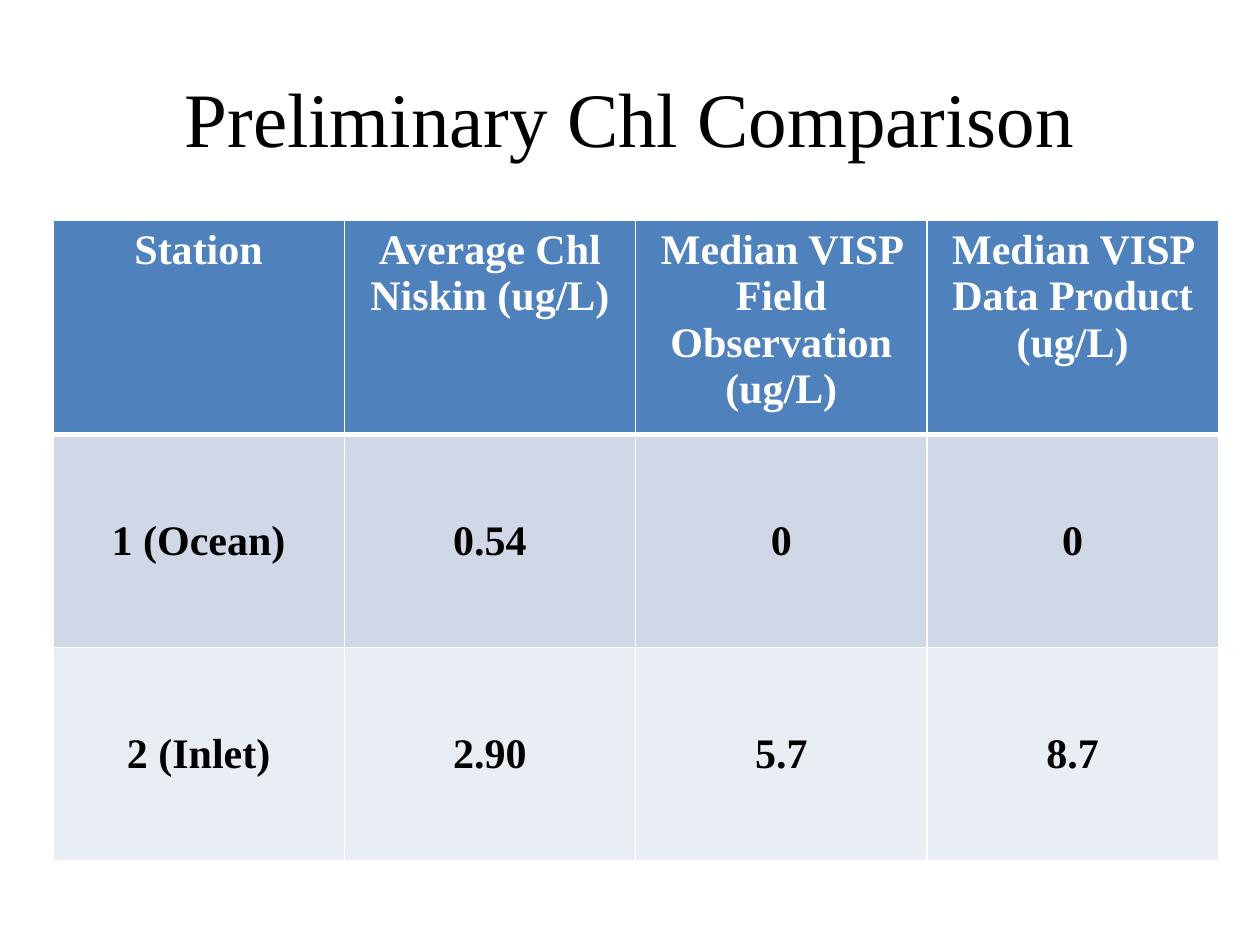
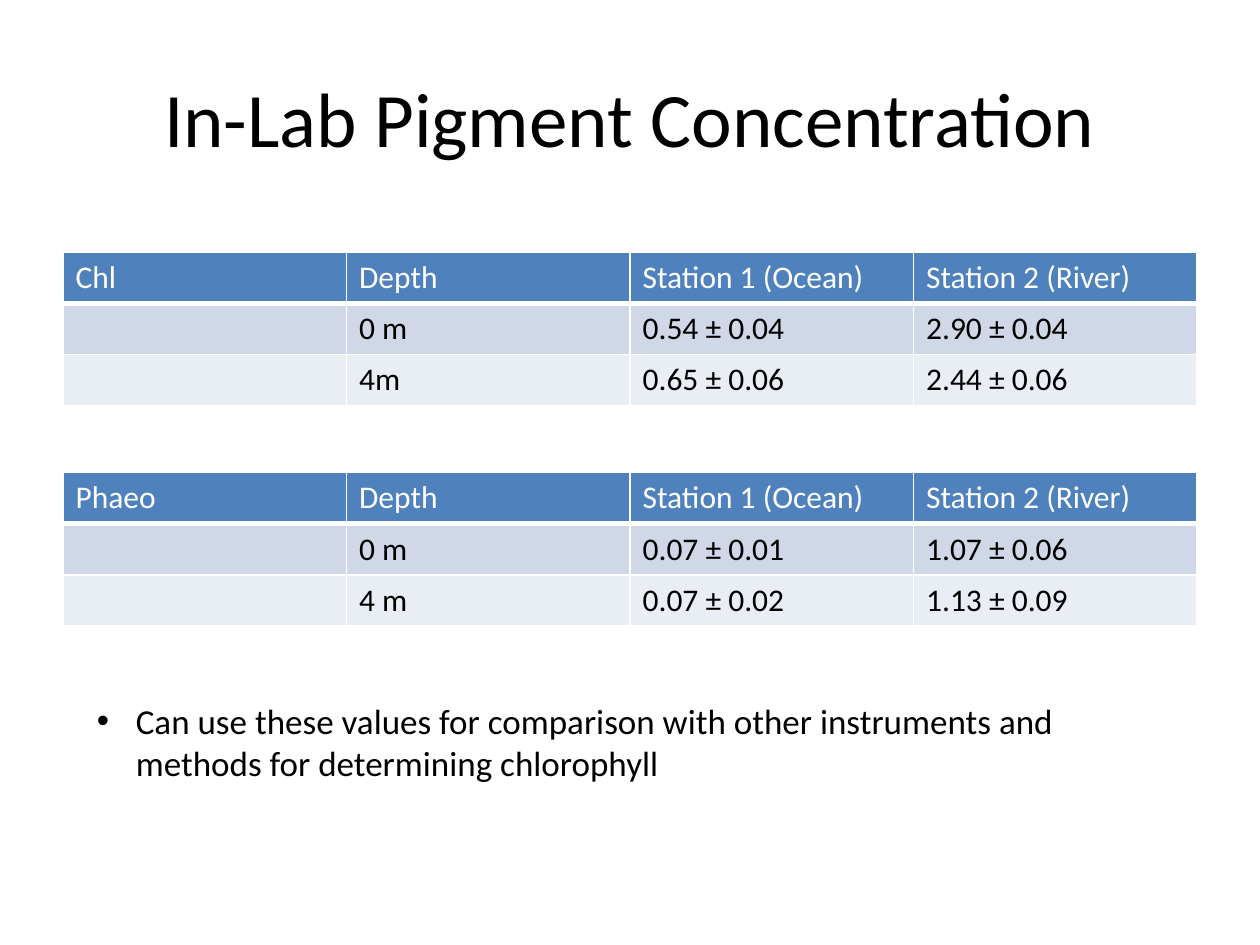
from lxml import etree
from pptx import Presentation
from pptx import util as u
from pptx.dml.color import RGBColor
from pptx.enum import text
from pptx.oxml import ns

# Content
STATIONS = ["Station 1 (Ocean)", "Station 2 (River)"]
CHL_COMPARISON = [
    ["Station", "Average Chl Niskin (ug/L)",
     "Median VISP Field Observation (ug/L)", "Median VISP Data Product (ug/L)"],
    ["1 (Ocean)", "0.54", "0", "0"],
    ["2 (Inlet)", "2.90", "5.7", "8.7"],
]
CHL_BY_DEPTH = [
    ["Chl", "Depth", *STATIONS],
    ["", "0 m", "0.54 ± 0.04", "2.90 ± 0.04"],
    ["", "4m", "0.65 ± 0.06", "2.44 ± 0.06"],
]
PHAEO_BY_DEPTH = [
    ["Phaeo", "Depth", *STATIONS],
    ["", "0 m", "0.07 ± 0.01", "1.07 ± 0.06"],
    ["", "4 m", "0.07 ± 0.02", "1.13 ± 0.09"],
]
CONCLUSION = ("Can use these values for comparison with other instruments "
              "and methods for determining chlorophyll")

# Shared look
COLORS = {"ink": "000000", "paper": "FFFFFF", "header": "4F81BD",
          "band_dark": "D0D8E8", "band_light": "E9EDF4"}
SERIF, SANS = "Times New Roman", "Calibri"
CENTER, LEFT = text.PP_ALIGN.CENTER, text.PP_ALIGN.LEFT
TOP, MIDDLE = text.MSO_ANCHOR.TOP, text.MSO_ANCHOR.MIDDLE
COMPARISON_STYLE = {"font": {"name": SERIF, "size": u.Pt(24), "bold": True},
                    "align": CENTER, "body_anchor": MIDDLE}
DEPTH_STYLE = {"font": {"name": SANS, "size": u.Pt(18), "bold": False},
               "align": LEFT, "body_anchor": TOP}


def rgb(name):
    return RGBColor.from_string(COLORS[name])


def write(para, words, font, color="ink", align=LEFT):
    para.alignment = align
    if not words:
        return
    span = para.add_run()
    span.text = words
    for key, value in font.items():
        setattr(span.font, key, value)
    span.font.color.rgb = rgb(color)


def add_text(page, at, words, font, align=LEFT, anchor=TOP):
    box = page.shapes.add_textbox(*map(u.Inches, at))
    frame = box.text_frame
    frame.word_wrap = True
    frame.vertical_anchor = anchor
    write(frame.paragraphs[0], words, font, align=align)
    return frame.paragraphs[0]


def add_page(deck, title, font_name):
    page = deck.slides.add_slide(deck.slide_layouts[6])
    add_text(page, (0.5, 0.3, 9, 1.25), title,
             {"name": font_name, "size": u.Pt(44)}, CENTER, MIDDLE)
    return page


def add_bullet(para, indent):
    props = para._p.get_or_add_pPr()
    props.set("marL", str(u.Inches(indent)))
    props.set("indent", str(-u.Inches(indent)))
    etree.SubElement(props, ns.qn("a:buFont"), typeface="Arial")
    etree.SubElement(props, ns.qn("a:buChar"), char="•")


def add_borders(cell, is_header):
    props = cell._tc.get_or_add_tcPr()
    for side in "LRTB":
        width = 3 if is_header and side == "B" else 1
        line = etree.SubElement(props, ns.qn(f"a:ln{side}"), w=str(u.Pt(width)))
        fill = etree.SubElement(line, ns.qn("a:solidFill"))
        etree.SubElement(fill, ns.qn("a:srgbClr"), val=COLORS["paper"])


def add_data_table(page, at, rows, style):
    frame = page.shapes.add_table(len(rows), len(rows[0]), *map(u.Inches, at))
    table = frame.table
    fills = ["header", "band_dark", "band_light"]
    for row_index, row in enumerate(rows):
        is_header = row_index == 0
        for column_index, words in enumerate(row):
            cell = table.cell(row_index, column_index)
            add_borders(cell, is_header)
            cell.fill.solid()
            cell.fill.fore_color.rgb = rgb(fills[row_index])
            cell.vertical_anchor = TOP if is_header else style["body_anchor"]
            write(cell.text_frame.paragraphs[0], words, style["font"],
                  "paper" if is_header else "ink", style["align"])


def main():
    deck = Presentation()
    deck.slide_width, deck.slide_height = u.Inches(10), u.Inches(7.5)

    # Chlorophyll by method
    page = add_page(deck, "Preliminary Chl Comparison", SERIF)
    add_data_table(page, (0.42, 1.75, 9.25, 5.07), CHL_COMPARISON, COMPARISON_STYLE)

    # Pigments by depth
    page = add_page(deck, "In-Lab Pigment Concentration", SANS)
    for top, rows in [(2, CHL_BY_DEPTH), (3.75, PHAEO_BY_DEPTH)]:
        add_data_table(page, (0.5, top, 9, 1.22), rows, DEPTH_STYLE)
    para = add_text(page, (0.67, 5.5, 8.83, 0.77), CONCLUSION,
                    {"name": SANS, "size": u.Pt(20)})
    add_bullet(para, 0.31)

    deck.save("out.pptx")


if __name__ == "__main__":
    main()
